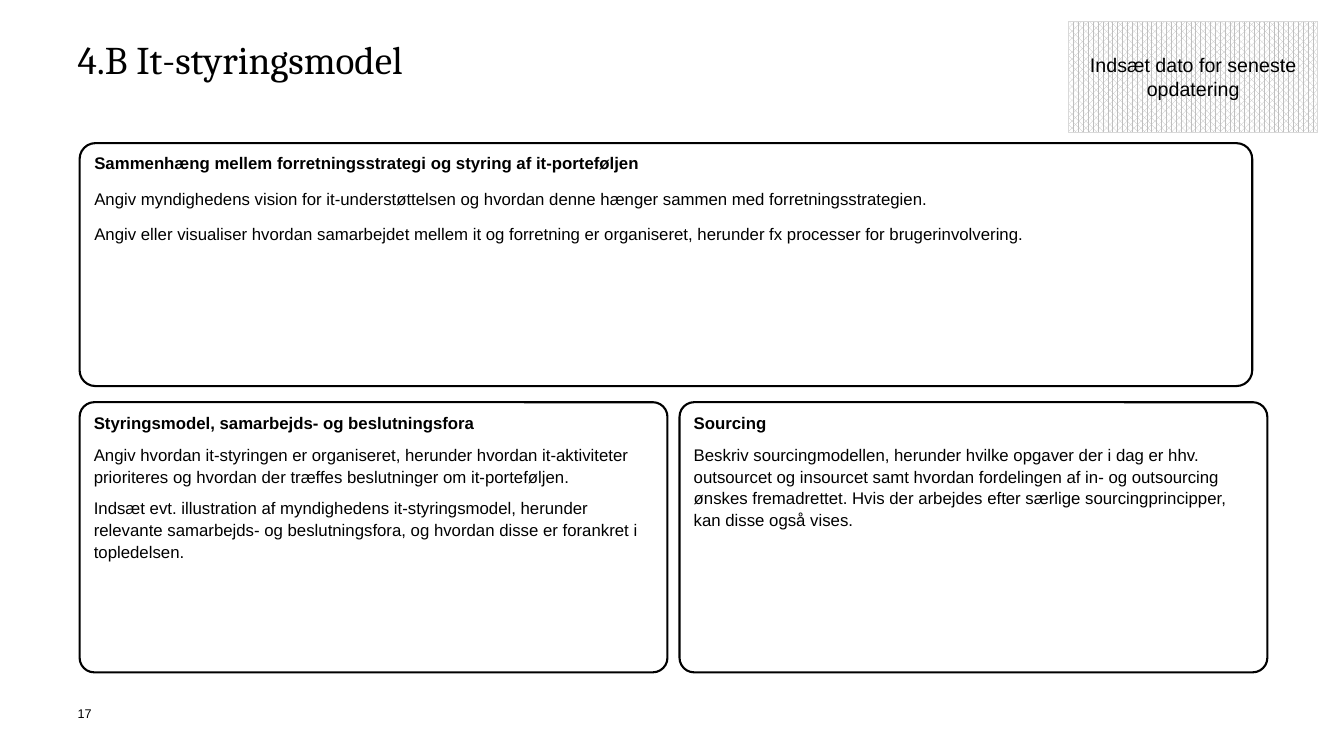
from dataclasses import dataclass
from typing import Any

import lxml.etree
import pptx
import pptx.dml.color
import pptx.enum.dml
import pptx.enum.shapes
import pptx.enum.text
import pptx.oxml.ns
import pptx.util

EMU_PER_PX = 9144
COLORS = {"ink": "000000", "pattern": "BFBFBF", "paper": "FFFFFF", "edge": "D9D9D9"}
ALIGN = pptx.enum.text.PP_ALIGN
ANCHOR = pptx.enum.text.MSO_ANCHOR
SHAPES = pptx.enum.shapes.MSO_SHAPE

FRAME_FORMAT = {
    "word_wrap": True,
    "auto_size": pptx.enum.text.MSO_AUTO_SIZE.NONE,
    "vertical_anchor": ANCHOR.TOP,
}
NO_INSETS = {f"margin_{side}": 0 for side in ("left", "top", "right", "bottom")}
INSETS = {"margin_left": 91440, "margin_top": 45720,
          "margin_right": 91440, "margin_bottom": 45720}


@dataclass(frozen=True)
class Box:
    left: int
    top: int
    width: int
    height: int

    def emu(self) -> list[int]:
        return [px(value) for value in (self.left, self.top, self.width, self.height)]


@dataclass(frozen=True)
class Panel:
    box: Box
    corner: float
    heading: str
    texts: tuple[str, ...]
    gap: int
    line_spacing: float


OVERVIEW = Panel(
    Box(79, 142, 1163, 241), 0.065,
    "Sammenhæng mellem forretningsstrategi og styring af it-porteføljen",
    (
        "Angiv myndighedens vision for it-understøttelsen og hvordan denne hænger "
        "sammen med forretningsstrategien.",
        "Angiv eller visualiser hvordan samarbejdet mellem it og forretning er "
        "organiseret, herunder fx processer for brugerinvolvering.",
    ),
    11, 1.0,
)
LOWER_PANELS = [
    Panel(
        Box(79, 399, 583, 268), 0.054,
        "Styringsmodel, samarbejds- og beslutningsfora",
        (
            "Angiv hvordan it-styringen er organiseret, herunder hvordan it-aktiviteter "
            "prioriteres og hvordan der træffes beslutninger om it-porteføljen.",
            "Indsæt evt. illustration af myndighedens it-styringsmodel, herunder "
            "relevante samarbejds- og beslutningsfora, og hvordan disse er forankret "
            "i topledelsen.",
        ),
        7, 1.08,
    ),
    Panel(
        Box(674, 399, 583, 268), 0.054,
        "Sourcing",
        (
            "Beskriv sourcingmodellen, herunder hvilke opgaver der i dag er hhv. "
            "outsourcet og insourcet samt hvordan fordelingen af in- og outsourcing "
            "ønskes fremadrettet. Hvis der arbejdes efter særlige sourcingprincipper, "
            "kan disse også vises.",
        ),
        7, 1.08,
    ),
]


def px(value: int) -> int:
    return value * EMU_PER_PX


def color(name: str) -> pptx.dml.color.RGBColor:
    return pptx.dml.color.RGBColor.from_string(COLORS[name])


def apply(target: Any, values: dict[str, Any]) -> None:
    for name, value in values.items():
        setattr(target, name, value)


def place(shape: Any, box: Box) -> None:
    apply(shape, dict(zip(("left", "top", "width", "height"), box.emu())))


def write(shape: Any, texts: tuple[str, ...], size: int, font: str = "Arial",
          insets: dict[str, int] = NO_INSETS, align: Any = ALIGN.LEFT, gap: int = 0,
          line_spacing: float = 1.0, bold_first: bool = False,
          anchor: Any = ANCHOR.TOP) -> None:
    frame = shape.text_frame
    apply(frame, FRAME_FORMAT | insets | {"vertical_anchor": anchor})
    for index, text in enumerate(texts):
        paragraph = frame.add_paragraph() if index else frame.paragraphs[0]
        apply(paragraph, {
            "alignment": align,
            "line_spacing": line_spacing,
            "space_before": pptx.util.Pt(gap if index else 0),
            "space_after": pptx.util.Pt(0),
        })
        run = paragraph.add_run()
        run.text = text
        apply(run.font, {
            "name": font,
            "size": pptx.util.Pt(size),
            "bold": bold_first and index == 0,
        })
        run.font.color.rgb = color("ink")


def outline(shape: Any, name: str, width: float) -> None:
    shape.line.color.rgb = color(name)
    shape.line.width = pptx.util.Pt(width)


def round_placeholder(shape: Any, corner: float) -> None:
    qn = pptx.oxml.ns.qn
    geometry = lxml.etree.SubElement(shape._element.spPr, qn("a:prstGeom"), prst="roundRect")
    guides = lxml.etree.SubElement(geometry, qn("a:avLst"))
    lxml.etree.SubElement(guides, qn("a:gd"), name="adj", fmla=f"val {round(corner * 100000)}")


def fill_panel(shape: Any, panel: Panel) -> None:
    shape.fill.background()
    outline(shape, "ink", 1.5)
    write(shape, (panel.heading, *panel.texts), 12, insets=INSETS, gap=panel.gap,
          line_spacing=panel.line_spacing, bold_first=True)


def add_panel(slide: Any, panel: Panel) -> None:
    shape = slide.shapes.add_shape(SHAPES.ROUNDED_RECTANGLE, *panel.box.emu())
    shape.shadow.inherit = False
    shape.adjustments[0] = panel.corner
    fill_panel(shape, panel)


def add_date_note(slide: Any) -> None:
    note = slide.shapes.add_shape(SHAPES.RECTANGLE, *Box(1060, 21, 247, 110).emu())
    note.shadow.inherit = False
    note.fill.patterned()
    note.fill.pattern = pptx.enum.dml.MSO_PATTERN.PERCENT_70
    note.fill.fore_color.rgb = color("pattern")
    note.fill.back_color.rgb = color("paper")
    outline(note, "edge", 0.5)
    write(note, ("Indsæt dato for seneste opdatering",), 14, insets=INSETS,
          align=ALIGN.CENTER, anchor=ANCHOR.MIDDLE)


def main() -> None:
    presentation = pptx.Presentation()
    presentation.slide_width = px(1333)
    presentation.slide_height = px(750)
    layout = presentation.slide_layouts.get_by_name("Content with Caption")
    slide = presentation.slides.add_slide(layout)
    title, content, body = slide.placeholders
    content._element.getparent().remove(content._element)

    place(title, Box(77, 40, 1180, 102))
    write(title, ("4.B It-styringsmodel",), 28, font="Cambria", line_spacing=0.9)

    place(body, OVERVIEW.box)
    round_placeholder(body, OVERVIEW.corner)
    fill_panel(body, OVERVIEW)

    for panel in LOWER_PANELS:
        add_panel(slide, panel)
    add_date_note(slide)

    page_number = slide.shapes.add_textbox(*Box(77, 700, 31, 30).emu())
    write(page_number, ("17",), 9)
    presentation.save("out.pptx")


if __name__ == "__main__":
    main()
